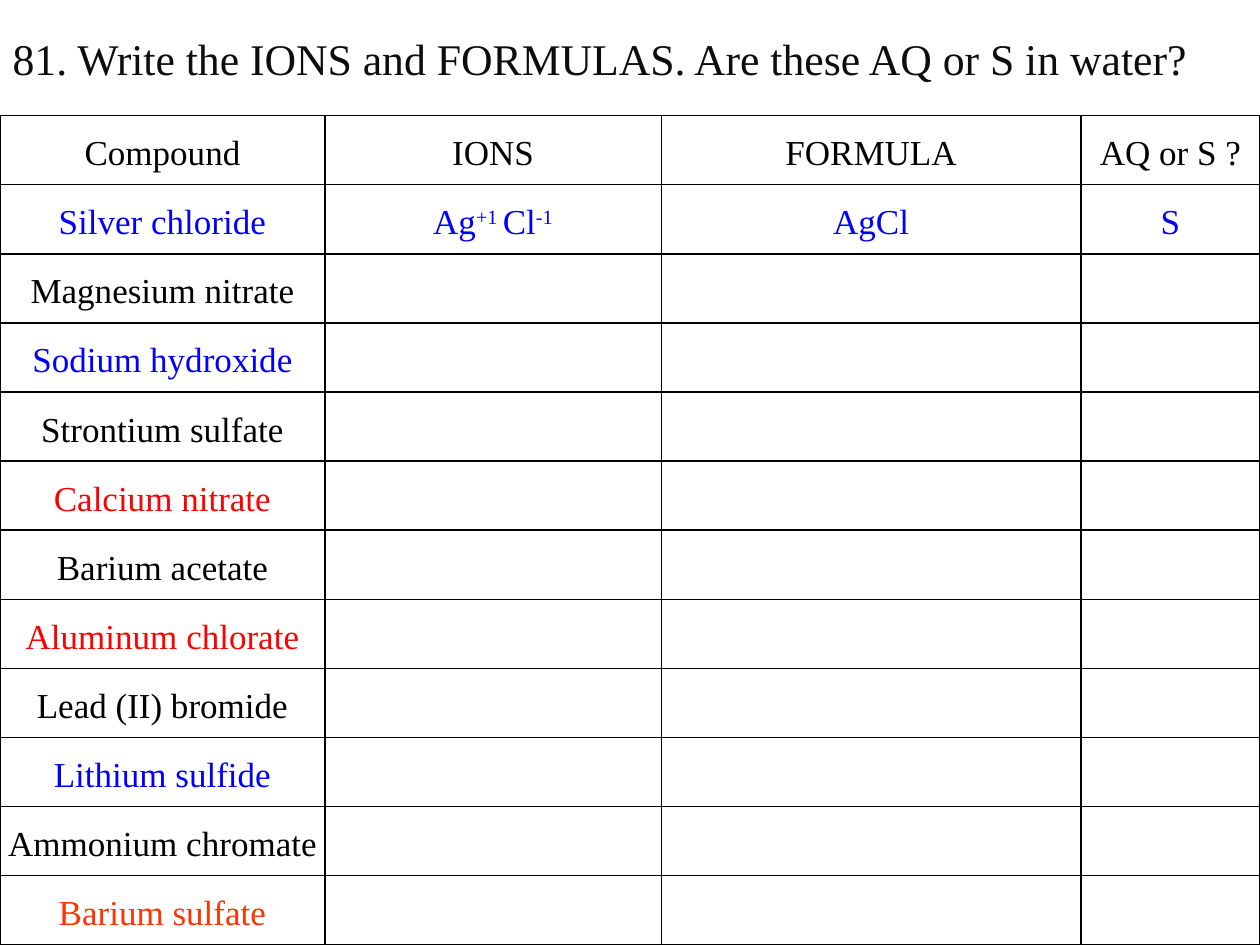
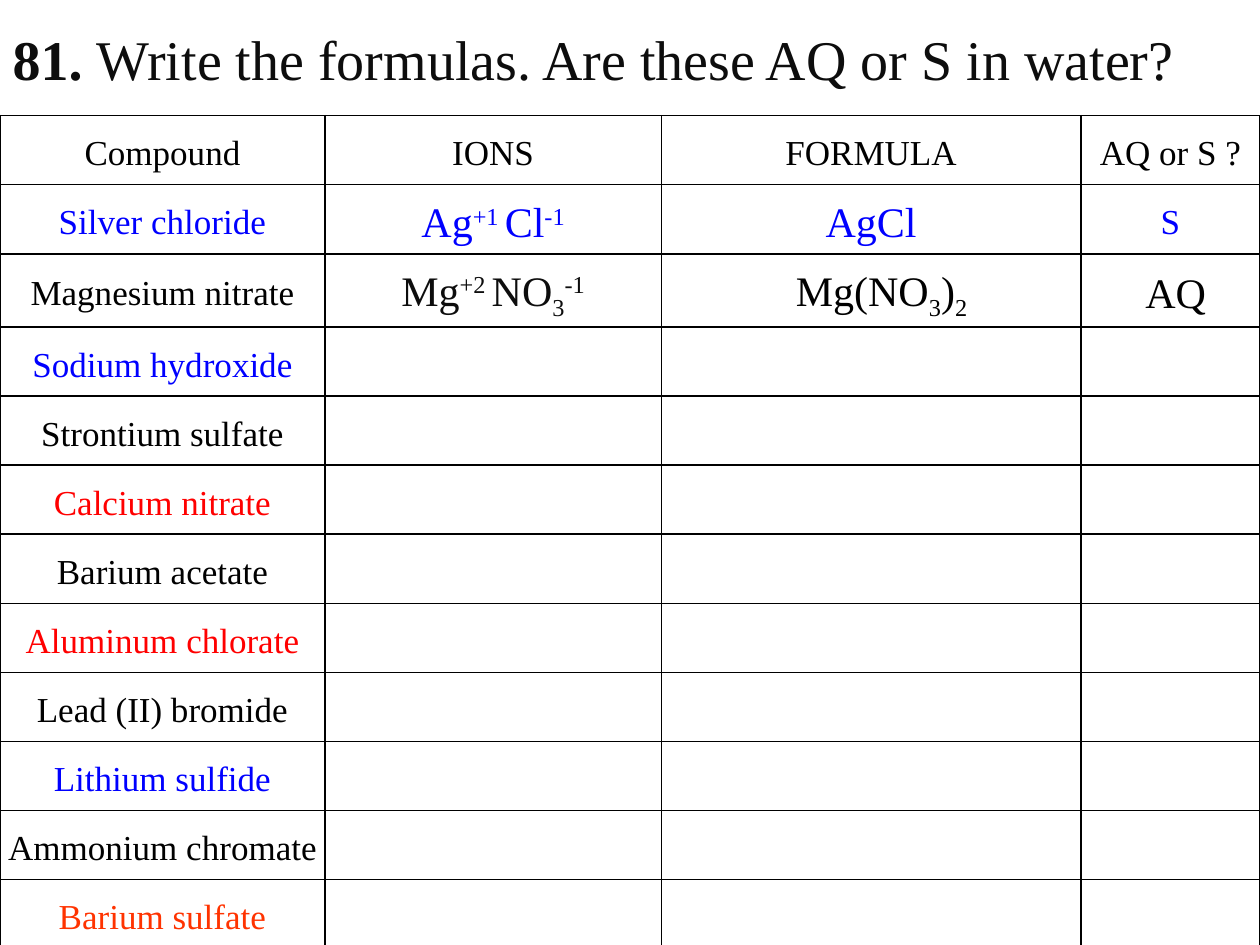
from dataclasses import dataclass

from lxml import etree
from pptx import Presentation
from pptx.dml.color import RGBColor
from pptx.enum.text import MSO_ANCHOR, MSO_AUTO_SIZE, PP_ALIGN
from pptx.oxml.ns import qn
from pptx.util import Cm, Pt

CENTER, LEFT = PP_ALIGN.CENTER, PP_ALIGN.LEFT
MIDDLE = MSO_ANCHOR.MIDDLE
NO_AUTOFIT = MSO_AUTO_SIZE.NONE


@dataclass(frozen=True)
class Theme:
    font: str = "Times New Roman"
    black: str = "000000"
    ink: str = "0D0D0D"
    blue: str = "0000FF"
    red: str = "FF0000"
    orange: str = "FF3300"
    cell_size: int = 20
    answer_size: int = 24
    superscript: int = 30000
    subscript: int = -25000
    border: int = 1


theme = Theme()
UP, DOWN = theme.superscript, theme.subscript


def add_text(para, text, *, size, color, bold=False, baseline=0):
    span = para.add_run()
    span.text = text
    span.font.name = theme.font
    span.font.size = Pt(size)
    span.font.bold = bold
    span.font.color.rgb = RGBColor.from_string(color)
    if baseline:
        span.font._element.set("baseline", str(baseline))


def add_borders(cell):
    properties = cell._tc.get_or_add_tcPr()
    for side in ("a:lnL", "a:lnR", "a:lnT", "a:lnB"):
        line = etree.SubElement(properties, qn(side), w=str(Pt(theme.border)))
        fill = etree.SubElement(line, qn("a:solidFill"))
        etree.SubElement(fill, qn("a:srgbClr"), val=theme.black)


# Page and table measures, in centimetres
PAGE_WIDTH, PAGE_HEIGHT = 25.4, 19.05
TITLE_HEIGHT = 2.33
TABLE_HEIGHT = PAGE_HEIGHT - TITLE_HEIGHT
COLUMN_WIDTHS = (6.55, 6.78, 8.46, 3.61)
CELL_MARGIN = 0.1

# Content shared by both tables
headings = ("Compound", "IONS", "FORMULA", "AQ or S ?")
compounds = (
    ("Silver chloride", theme.blue),
    ("Magnesium nitrate", theme.black),
    ("Sodium hydroxide", theme.blue),
    ("Strontium sulfate", theme.black),
    ("Calcium nitrate", theme.red),
    ("Barium acetate", theme.black),
    ("Aluminum chlorate", theme.red),
    ("Lead (II) bromide", theme.black),
    ("Lithium sulfide", theme.blue),
    ("Ammonium chromate", theme.black),
    ("Barium sulfate", theme.orange),
)
silver_ions = (("Ag", 0), ("+1 ", UP), ("Cl", 0), ("-1", UP))
magnesium_ions = (("Mg", 0), ("+2 ", UP), ("NO", 0), ("3", DOWN), ("-1", UP))
magnesium_formula = (("Mg(NO", 0), ("3", DOWN), (")", 0), ("2", DOWN))

# Answers by (row, column): spans, size, colour, extra left margin
pages = (
    dict(
        title=(("81. ", False),
               ("Write the IONS and FORMULAS. Are these AQ or S in water?", False)),
        title_size=25,
        answers={
            (1, 1): (silver_ions, theme.cell_size, theme.blue, 0),
            (1, 2): ((("AgCl", 0),), theme.cell_size, theme.blue, 0),
            (1, 3): ((("S", 0),), theme.cell_size, theme.blue, 0),
        },
    ),
    dict(
        title=(("81. ", True),
               ("Write the formulas. Are these AQ or S in water?", False)),
        title_size=32,
        answers={
            (1, 1): (silver_ions, theme.answer_size, theme.blue, 0),
            (1, 2): ((("AgCl", 0),), theme.answer_size, theme.blue, 0),
            (1, 3): ((("S", 0),), theme.cell_size, theme.blue, 0),
            (2, 1): (magnesium_ions, theme.answer_size, theme.ink, 0),
            (2, 2): (magnesium_formula, theme.answer_size, theme.black, 0.42),
            (2, 3): ((("AQ", 0),), theme.answer_size, theme.black, 0.21),
        },
    ),
)

# Headings and compound names, keyed like the answers
labels = {(0, column): (((text, 0),), theme.cell_size, theme.black, 0)
          for column, text in enumerate(headings)}
labels |= {(row, 0): (((name, 0),), theme.cell_size, color, 0)
           for row, (name, color) in enumerate(compounds, start=1)}

deck = Presentation()
deck.slide_width, deck.slide_height = Cm(PAGE_WIDTH), Cm(PAGE_HEIGHT)
title_only = deck.slide_layouts[5]

for page in pages:
    slide = deck.slides.add_slide(title_only)

    # Title
    box = slide.shapes.title
    box.left, box.top = Cm(0), Cm(0)
    box.width, box.height = Cm(PAGE_WIDTH), Cm(TITLE_HEIGHT)
    frame = box.text_frame
    frame.word_wrap = True
    frame.auto_size = NO_AUTOFIT
    frame.vertical_anchor = MIDDLE
    para = frame.paragraphs[0]
    para.alignment = LEFT
    for text, bold in page["title"]:
        add_text(para, text, size=page["title_size"], color=theme.ink, bold=bold)

    # Table grid
    row_count = len(compounds) + 1
    table = slide.shapes.add_table(
        row_count, len(headings), Cm(0), Cm(TITLE_HEIGHT),
        Cm(PAGE_WIDTH), Cm(TABLE_HEIGHT)).table
    table.first_row = table.horz_banding = False
    for column, width in zip(table.columns, COLUMN_WIDTHS):
        column.width = Cm(width)
    for row in table.rows:
        row.height = Cm(TABLE_HEIGHT / row_count)
    for cell in table.iter_cells():
        add_borders(cell)
        cell.fill.background()
        cell.vertical_anchor = MIDDLE
        cell.margin_left = cell.margin_right = Cm(CELL_MARGIN)
        cell.margin_top = cell.margin_bottom = Cm(CELL_MARGIN)

    # Table text
    for position, (spans, size, color, shift) in (labels | page["answers"]).items():
        cell = table.cell(*position)
        cell.margin_left = Cm(CELL_MARGIN + shift)
        para = cell.text_frame.paragraphs[0]
        para.alignment = CENTER
        para.line_spacing = 1.19
        para.space_after = Pt(6)
        for text, baseline in spans:
            add_text(para, text, size=size, color=color, baseline=baseline)

deck.save("out.pptx")
